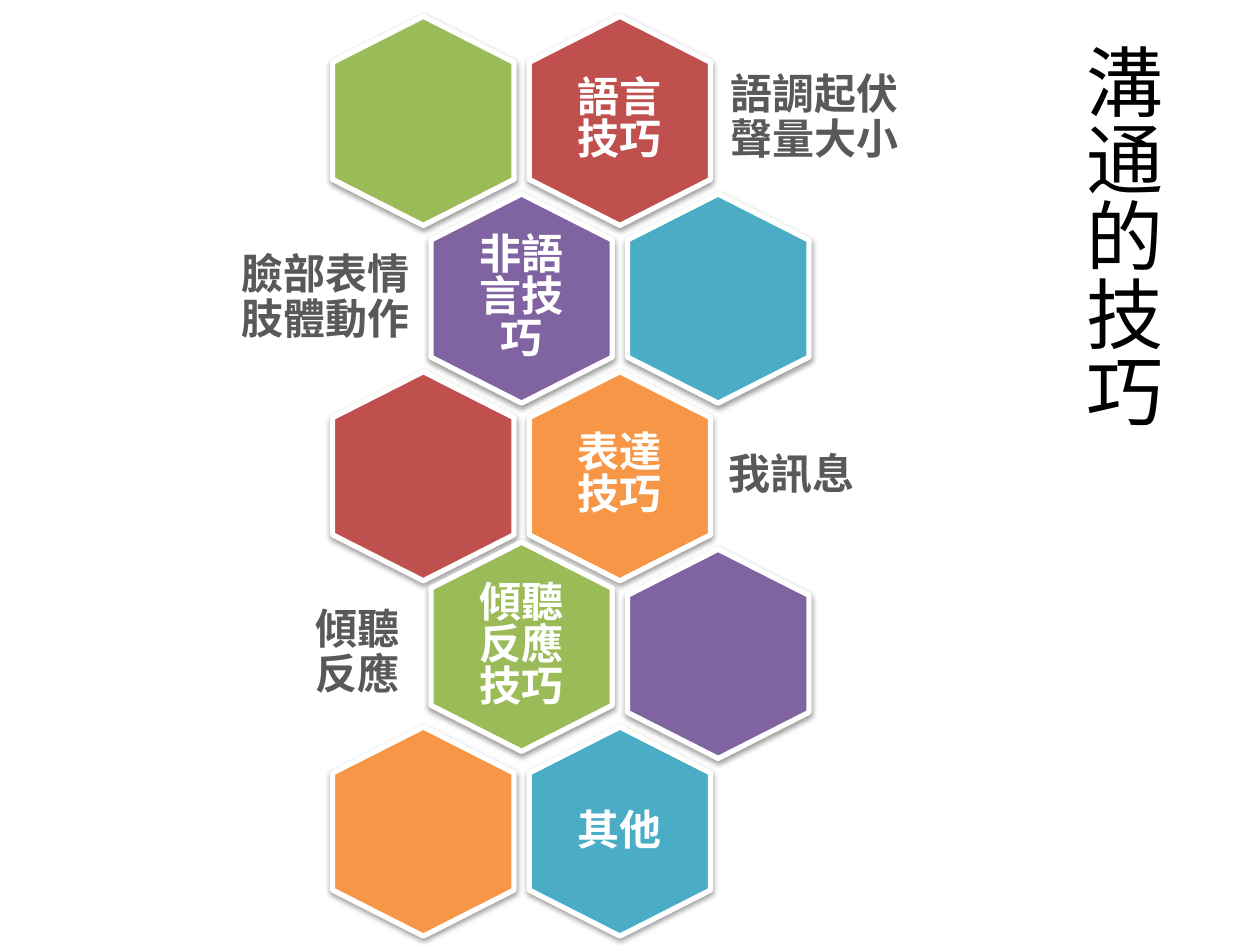
from lxml.etree import SubElement
from pptx import Presentation
from pptx.dml.color import RGBColor
from pptx.enum.text import MSO_ANCHOR, PP_ALIGN
from pptx.oxml.ns import qn
from pptx.util import Inches, Pt

BLACK = RGBColor(0x00, 0x00, 0x00)
WHITE = RGBColor(0xFF, 0xFF, 0xFF)
GRAY = RGBColor(0x59, 0x59, 0x59)
RED = RGBColor(0xC0, 0x50, 0x4D)
GREEN = RGBColor(0x9B, 0xBB, 0x59)
PURPLE = RGBColor(0x80, 0x64, 0xA2)
BLUE = RGBColor(0x4B, 0xAC, 0xC6)
ORANGE = RGBColor(0xF7, 0x96, 0x46)

HEXAGON_OUTLINE = [(0.5, 0), (1, 0.22), (1, 0.78), (0.5, 1), (0, 0.78), (0, 0.22)]


class HoneycombSlide:
    font_name = "Noto Sans CJK SC"
    left, top = 2.64, 0.13
    half_column, row_pitch = 0.78, 1.41
    cell_width, cell_height = 1.44, 1.66
    caption_height, caption_drop = 0.99, 0.33

    def __init__(self, slide):
        self.slide = slide

    def row_top(self, row):
        return self.top + row * self.row_pitch

    def add_words(self, frame, words, size, color, align, bold=False, spacing=None):
        frame.word_wrap = True
        frame.vertical_anchor = MSO_ANCHOR.MIDDLE
        paragraph = frame.paragraphs[0]
        paragraph.alignment = align
        if spacing:
            paragraph.line_spacing = spacing
            paragraph.space_after = Pt(size * 0.35)
        run = paragraph.add_run()
        run.text = words
        run.font.size = Pt(size)
        run.font.bold = bold
        run.font.name = self.font_name
        run.font.color.rgb = color
        SubElement(run.font._element, qn("a:ea"), typeface=self.font_name)

    def inset(self, frame, across, down):
        frame.margin_left = frame.margin_right = Inches(across)
        frame.margin_top = frame.margin_bottom = Inches(down)

    def title(self, words, left, top, width, height):
        heading = self.slide.shapes.title
        heading.left, heading.top = Inches(left), Inches(top)
        heading.width, heading.height = Inches(width), Inches(height)
        self.add_words(heading.text_frame, words, 44, BLACK, PP_ALIGN.CENTER)
        heading.text_frame._txBody.bodyPr.set("vert", "eaVert")

    def hexagon(self, half_columns, row, color, words="", spacing=Pt(24)):
        left = self.left + half_columns * self.half_column
        top = self.row_top(row)
        corners = [
            (Inches(left + x * self.cell_width), Inches(top + y * self.cell_height))
            for x, y in HEXAGON_OUTLINE
        ]
        builder = self.slide.shapes.build_freeform(*corners[0])
        builder.add_line_segments(corners[1:], close=True)
        cell = builder.convert_to_shape()
        cell.fill.solid()
        cell.fill.fore_color.rgb = color
        cell.line.color.rgb = WHITE
        cell.line.width = Pt(3)
        self.drop_shadow(cell)
        if words:
            self.inset(cell.text_frame, 0.32, 0.36)
            self.add_words(cell.text_frame, words, 24, WHITE, PP_ALIGN.CENTER, True, spacing)

    def drop_shadow(self, cell):
        cell.shadow.inherit = False
        effects = cell._element.spPr.find(qn("a:effectLst"))
        shadow = SubElement(effects, qn("a:outerShdw"), blurRad="40000",
                            dist="20000", dir="5400000", rotWithShape="0")
        tint = SubElement(shadow, qn("a:srgbClr"), val="000000")
        SubElement(tint, qn("a:alpha"), val="38000")

    def caption(self, left, row, width, words, align):
        box = self.slide.shapes.add_textbox(
            Inches(left), Inches(self.row_top(row) + self.caption_drop),
            Inches(width), Inches(self.caption_height))
        self.inset(box.text_frame, 0.1, 0.1)
        self.add_words(box.text_frame, words, 24, GRAY, align, True, 0.9)


def main():
    deck = Presentation()
    deck.slide_width, deck.slide_height = Inches(10), Inches(7.5)
    skills = HoneycombSlide(deck.slides.add_slide(deck.slide_layouts[5]))

    skills.title("溝通的技巧", 8.31, 0.3, 1.19, 5.58)

    skills.hexagon(2, 0, RED, "語言技巧")
    skills.caption(5.7, -0.01, 1.82, "語調起伏聲量大小", PP_ALIGN.LEFT)
    skills.hexagon(0, 0, GREEN)

    skills.hexagon(1, 1, PURPLE, "非語言技巧")
    skills.caption(1.56, 1, 1.79, "臉部表情肢體動作", PP_ALIGN.RIGHT)
    skills.hexagon(3, 1, BLUE)

    skills.hexagon(2, 2, ORANGE, "表達技巧")
    skills.caption(5.68, 2, 1.85, "我訊息", PP_ALIGN.LEFT)
    skills.hexagon(0, 2, RED)

    skills.hexagon(1, 2.96, GREEN, "傾聽反應技巧")
    skills.caption(2.21, 3, 1.06, "傾聽反應", PP_ALIGN.RIGHT)
    skills.hexagon(3, 3, PURPLE)

    skills.hexagon(2, 4, BLUE, "其他", 0.9)
    skills.hexagon(0, 4, ORANGE)

    deck.save("out.pptx")


if __name__ == "__main__":
    main()
